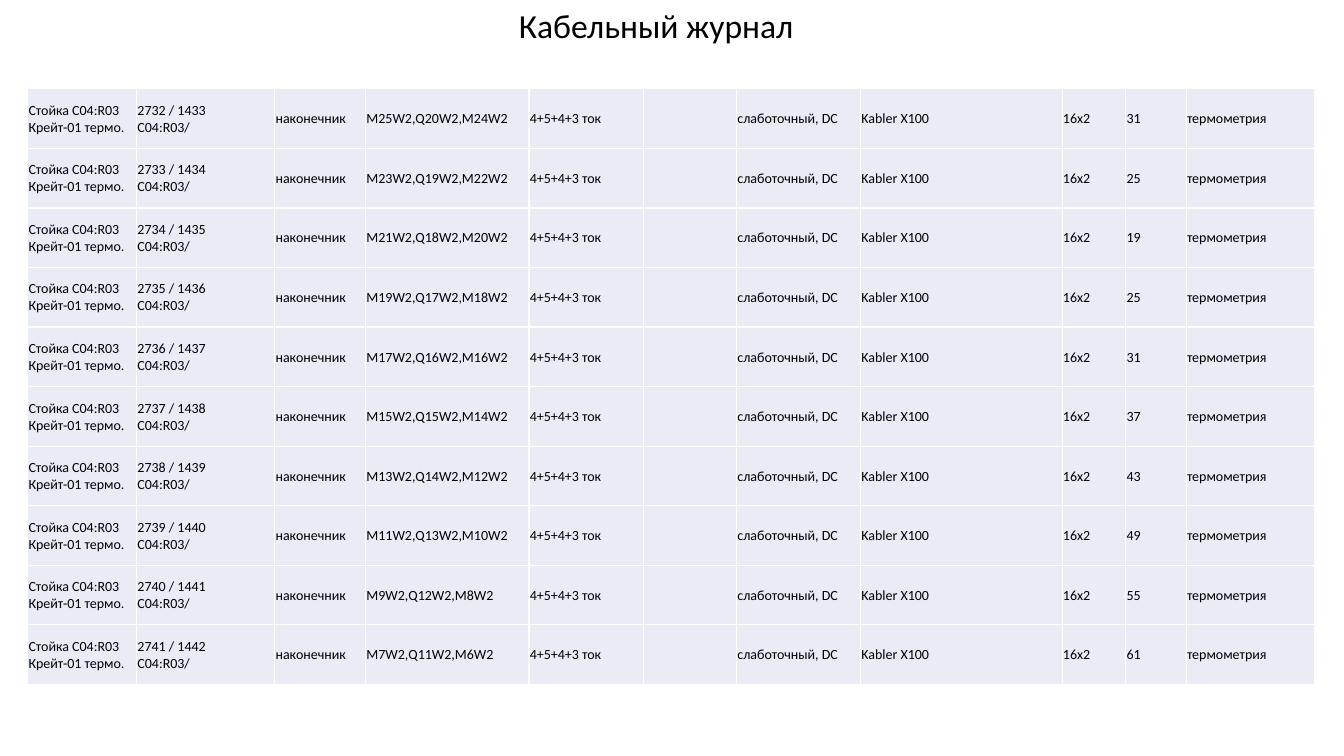
from copy import deepcopy

from lxml.etree import SubElement as Sub
from pptx import Presentation
from pptx.dml.color import RGBColor as RGB
from pptx.enum.text import MSO_ANCHOR as Anchor, MSO_AUTO_SIZE as Fit
from pptx.oxml.ns import qn
from pptx.util import Pt

BLACK = RGB(0x00, 0x00, 0x00)
WHITE = RGB(0xFF, 0xFF, 0xFF)
PALE = RGB(0xE9, 0xEB, 0xF5)

WIDTHS = [77.8, 98.7, 64.9, 116.7, 82.1, 66.2, 88.6, 144, 45.4, 43.2, 91.5]
ROW = 42.55
COUNT = 10


def write(frame, text, size=10, color=BLACK, font="Calibri"):
    """Put text in the frame; a newline becomes a line break."""
    para = frame.paragraphs[0]
    para.text = text
    for run in para.runs:
        run.font.size = Pt(size)
        run.font.name = font
        run.font.color.rgb = color
    # Line breaks take the same format as the runs
    for mark in para._p.findall(qn("a:br")):
        mark.append(deepcopy(para.runs[0].font._element))


def border(cell, color=WHITE, width=1):
    props = cell._tc.get_or_add_tcPr()
    for side in ("lnL", "lnR", "lnT", "lnB"):
        line = Sub(props, qn("a:" + side), w=str(Pt(width)))
        fill = Sub(line, qn("a:solidFill"))
        Sub(fill, qn("a:srgbClr"), val=str(color))


class Page:
    def __init__(self, deck):
        self.slide = deck.slides.add_slide(deck.slide_layouts[6])

    def title(self, text, left, top, width, height):
        box = self.slide.shapes.add_textbox(
            Pt(left), Pt(top), Pt(width), Pt(height))
        frame = box.text_frame
        frame.word_wrap = False
        frame.auto_size = Fit.SHAPE_TO_FIT_TEXT
        write(frame, text, size=24)

    def table(self, rows, left, top, widths, height):
        grid = self.slide.shapes.add_table(
            len(rows), len(widths), Pt(left), Pt(top),
            Pt(sum(widths)), Pt(height * len(rows))).table
        grid.first_row = grid.horz_banding = False
        for col, width in zip(grid.columns, widths):
            col.width = Pt(width)
        for line, texts in zip(grid.rows, rows):
            line.height = Pt(height)
            for cell, text in zip(line.cells, texts):
                self.cell(cell, text)

    def cell(self, cell, text):
        border(cell)
        cell.fill.solid()
        cell.fill.fore_color.rgb = PALE
        cell.vertical_anchor = Anchor.MIDDLE
        cell.margin_left = cell.margin_right = cell.margin_top = Pt(0.6)
        cell.margin_bottom = Pt(0)
        if text:
            write(cell.text_frame, text)


def cable(num):
    """One journal row; the numbers step evenly from row to row."""
    odd = 25 - 2 * num
    return [
        "Стойка C04:R03 Крейт-01 термо.",
        f"{2732 + num} / {1433 + num}\nC04:R03/",
        "наконечник",
        f"M{odd}W2,Q{20 - num}W2,M{odd - 1}W2",
        "4+5+4+3 ток",
        "",
        "слаботочный, DC",
        "Kabler X100",
        "16x2",
        str(19 + 6 * abs(num - 2)),
        "термометрия",
    ]


def main():
    deck = Presentation()
    deck.slide_width, deck.slide_height = Pt(960), Pt(540)
    page = Page(deck)

    # Cable table
    page.table([cable(num) for num in range(COUNT)], 19.8, 63.4, WIDTHS, ROW)

    # Heading
    page.title("Кабельный журнал", 363.6, 0, 212.4, 36)

    deck.save("out.pptx")


if __name__ == "__main__":
    main()
